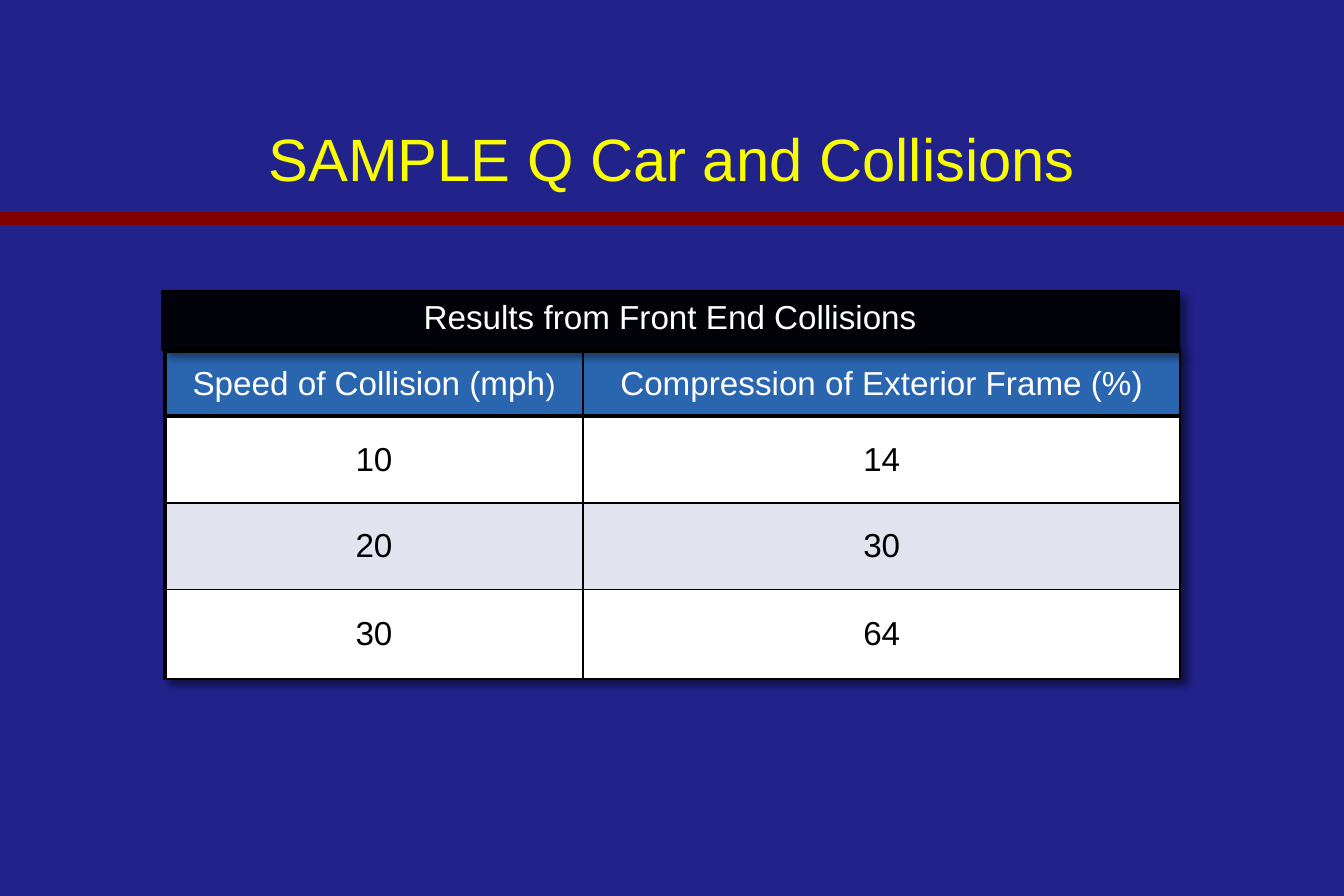
from lxml import etree
from pptx import Presentation
from pptx.dml.color import RGBColor
from pptx.enum.shapes import MSO_CONNECTOR, MSO_SHAPE
from pptx.enum.text import MSO_ANCHOR, PP_ALIGN
from pptx.oxml import parse_xml
from pptx.util import Pt

CENTER, MIDDLE = PP_ALIGN.CENTER, MSO_ANCHOR.MIDDLE
STRAIGHT, RECTANGLE = MSO_CONNECTOR.STRAIGHT, MSO_SHAPE.RECTANGLE
NAMESPACE = "http://schemas.openxmlformats.org/drawingml/2006/main"
COLORS = {
    "background": "22228B", "title": "FAFD00", "rule": "800000",
    "black": "000000", "white": "FFFFFF", "header": "2A66B0", "band": "E1E3EE",
}
SHADOW = (
    f'<a:effectLst xmlns:a="{NAMESPACE}">'
    '<a:outerShdw blurRad="63500" dist="63500" dir="2700000" algn="tl" rotWithShape="0">'
    f'<a:srgbClr val="{COLORS["black"]}"><a:alpha val="50000"/></a:srgbClr>'
    '</a:outerShdw></a:effectLst>'
)


def rgb(name):
    return RGBColor.from_string(COLORS[name])


def write(frame, spans, color, spacing=1.0):
    """Fill a text frame with one centred line of (text, size) spans."""
    frame.word_wrap = True
    frame.vertical_anchor = MIDDLE
    para = frame.paragraphs[0]
    para.alignment = CENTER
    para.line_spacing = spacing
    for text, size in spans:
        span = para.add_run()
        span.text = text
        span.font.color.rgb = rgb(color)
        for name, value in {"name": "Arial", "size": Pt(size), "bold": False}.items():
            setattr(span.font, name, value)


deck = Presentation()
deck.slide_width, deck.slide_height = Pt(810), Pt(540)
page = deck.slides.add_slide(deck.slide_layouts[5])
page.background.fill.solid()
page.background.fill.fore_color.rgb = rgb("background")

# Title
title = page.shapes.title
for name, value in {"left": 12, "top": 72, "width": 786, "height": 54}.items():
    setattr(title, name, Pt(value))
write(title.text_frame, [("SAMPLE Q Car and Collisions", 36)], "title", 0.8)

# Results table
rows = [
    ([("Speed of Collision (mph", 20), (")", 18)],
     [("Compression of Exterior Frame (%)", 20)]),
    ([("10", 20)], [("14", 20)]),
    ([("20", 20)], [("30", 20)]),
    ([("30", 20)], [("64", 20)]),
]
row_fills = ["header", "white", "band", "white"]
row_heights = [39, 52.5, 52, 54]
column_widths = [252, 360]
row_borders = [3, 2.25, 1, 1, 1]
column_borders = [3, 1.5, 1.5]

holder = page.shapes.add_table(len(rows), len(column_widths), Pt(99.4), Pt(211.7),
                               Pt(sum(column_widths)), Pt(sum(row_heights)))
table = holder.table
table.horz_banding = table.first_row = False
table._tbl.tblPr.insert(0, parse_xml(SHADOW))
for column, width in zip(table.columns, column_widths):
    column.width = Pt(width)
for r, (texts, fill, height) in enumerate(zip(rows, row_fills, row_heights)):
    table.rows[r].height = Pt(height)
    for c, spans in enumerate(texts):
        cell = table.cell(r, c)
        cell.margin_left = cell.margin_right = Pt(5)
        cell.margin_top = cell.margin_bottom = Pt(3)
        cell.vertical_anchor = MIDDLE
        cell.fill.solid()
        cell.fill.fore_color.rgb = rgb(fill)
        write(cell.text_frame, spans, "white" if r == 0 else "black")
        borders = {"lnL": column_borders[c], "lnR": column_borders[c + 1],
                   "lnT": row_borders[r], "lnB": row_borders[r + 1]}
        for position, (side, width) in enumerate(borders.items()):
            cell._tc.get_or_add_tcPr().insert(position, parse_xml(
                f'<a:{side} xmlns:a="{NAMESPACE}" w="{Pt(width)}"><a:solidFill>'
                f'<a:srgbClr val="{COLORS["black"]}"/></a:solidFill></a:{side}>'))

# Table caption
caption = page.shapes.add_shape(RECTANGLE, Pt(98), Pt(175.7), Pt(612), Pt(34.6))
caption.fill.solid()
caption.fill.fore_color.rgb = rgb("black")
color_node = caption._element.spPr.find(f".//{{{NAMESPACE}}}srgbClr")
etree.SubElement(color_node, f"{{{NAMESPACE}}}alpha", val="87000")
caption.line.color.rgb = rgb("black")
caption.line.width = Pt(2)
caption._element.spPr.append(parse_xml(SHADOW))
write(caption.text_frame, [("Results from Front End Collisions", 20)], "white", 0.8)

# Rule under the title
rule = page.shapes.add_connector(STRAIGHT, Pt(0), Pt(131.8), Pt(810), Pt(131.8))
rule.line.color.rgb = rgb("rule")
rule.line.width = Pt(7.5)
etree.SubElement(rule._element.spPr, f"{{{NAMESPACE}}}effectLst")

deck.save("out.pptx")
